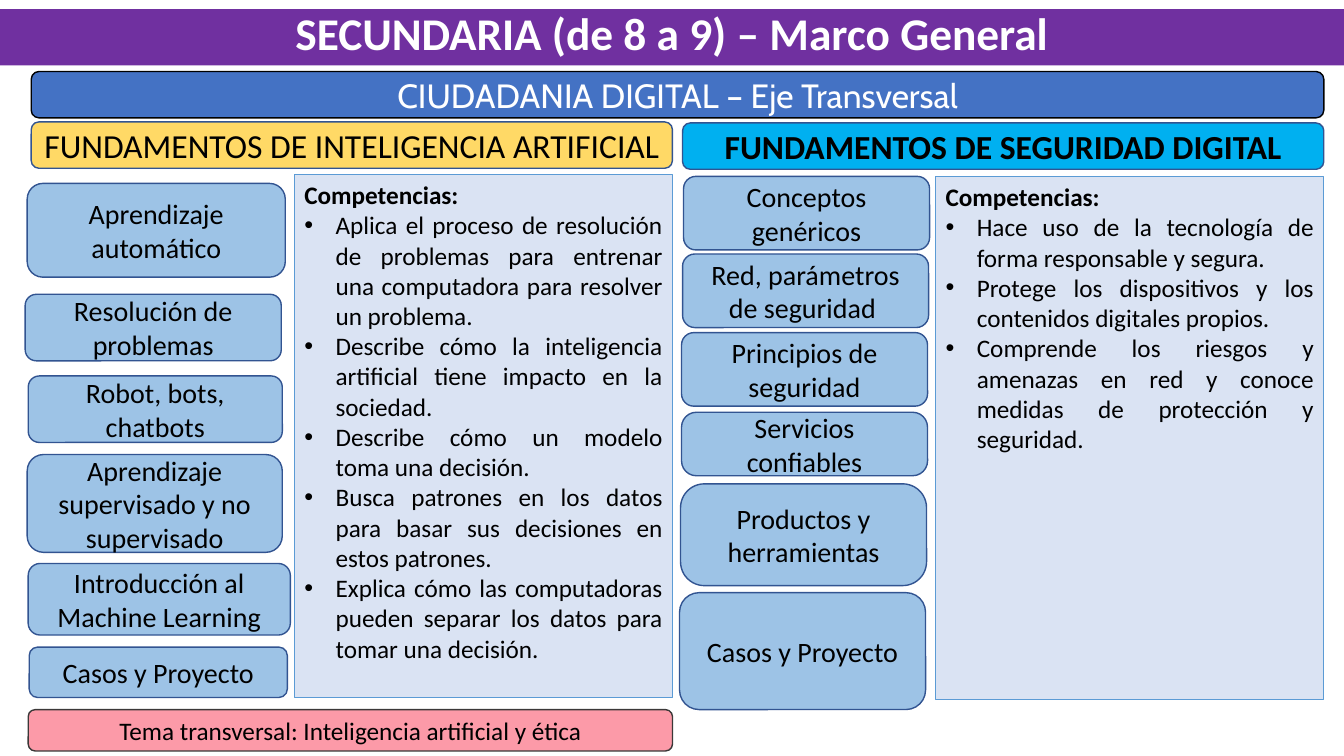
import pptx
import pptx.dml.color
import pptx.enum.shapes
import pptx.enum.text
import pptx.oxml
import pptx.util

PX = 9144
BLACK, WHITE, NAVY, SKY = "000000", "FFFFFF", "325491", "9DC3E6"
SHAPE = pptx.enum.shapes.MSO_SHAPE
ALIGN = pptx.enum.text.PP_ALIGN
ANCHOR = pptx.enum.text.MSO_ANCHOR

AI_TOPICS = [
    ("Aprendizaje automático", (27, 182, 256, 93)),
    ("Resolución de problemas", (25, 292, 254, 66)),
    ("Robot, bots, chatbots", (28, 373, 252, 66)),
    ("Aprendizaje supervisado y no supervisado", (27, 451, 253, 97)),
    ("Introducción al Machine Learning", (28, 559, 260, 71)),
    ("Casos y Proyecto", (29, 642, 256, 50)),
]
SECURITY_TOPICS = [
    ("Conceptos genéricos", (678, 175, 244, 73)),
    ("Red, parámetros de seguridad ", (677, 252, 244, 73)),
    ("Principios de seguridad", (676, 330, 244, 73)),
    ("Servicios confiables", (676, 409, 244, 63), 0.234),
    ("Productos y herramientas", (675, 480, 244, 101), 0.234),
    ("Casos y Proyecto", (674, 588, 244, 116)),
]
AI_SKILLS = [
    "Aplica el proceso de resolución de problemas para entrenar una computadora para resolver un problema.",
    "Describe cómo la inteligencia artificial tiene impacto en la sociedad.",
    "Describe cómo un modelo toma una decisión.",
    "Busca patrones en los datos para basar sus decisiones en estos patrones.",
    "Explica cómo las computadoras pueden separar los datos para tomar una decisión.",
]
SECURITY_SKILLS = [
    "Hace uso de la tecnología de forma responsable y segura.",
    "Protege los dispositivos y los contenidos digitales propios.",
    "Comprende los riesgos y amenazas en red y conoce medidas de protección y seguridad. ",
]


def color(value):
    """Turn a hex string into a colour."""
    return pptx.dml.color.RGBColor.from_string(value)


def add_box(page, place, fill, line=None, kind=SHAPE.ROUNDED_RECTANGLE, corner=None):
    """Draw a filled shape at a (left, top, width, height) place."""
    box = page.shapes.add_shape(kind, *(length * PX for length in place))
    box.shadow.inherit = False
    box.fill.solid()
    box.fill.fore_color.rgb = color(fill)
    if line:
        box.line.color.rgb = color(line)
        box.line.width = pptx.util.Pt(1)
    else:
        box.line.fill.background()
    if corner:
        box.adjustments[0] = corner
    box.text_frame.word_wrap = True
    return box


def write(para, text, size=20, font="Calibri", ink=BLACK, bold=False,
          align=ALIGN.CENTER, spacing=None):
    """Write formatted text into a paragraph."""
    para.alignment = align
    if spacing:
        para.line_spacing = spacing
    span = para.add_run()
    span.text = text
    span.font.name = font
    span.font.size = pptx.util.Pt(size)
    span.font.bold = bold
    span.font.color.rgb = color(ink)


def add_bullet(para, indent=31):
    """Give a paragraph a hanging bullet."""
    properties = para._p.get_or_add_pPr()
    properties.set("marL", str(indent * PX))
    properties.set("indent", str(-indent * PX))
    namespace = pptx.oxml.ns.nsdecls("a")
    for tag in ('buFont {} typeface="Arial"', 'buChar {} char="•"'):
        properties.append(pptx.oxml.parse_xml(f"<a:{tag.format(namespace)}/>"))


def add_label(page, text, place, fill, line=NAVY, kind=SHAPE.ROUNDED_RECTANGLE,
              corner=None, **style):
    """Draw a shape with one centred text."""
    box = add_box(page, place, fill, line, kind, corner)
    box.text_frame.vertical_anchor = ANCHOR.MIDDLE
    write(box.text_frame.paragraphs[0], text, **style)


def add_skills(page, skills, place):
    """Draw a panel with a heading and justified bullets."""
    frame = add_box(page, place, "DAE3F3", "5B9BD5", SHAPE.RECTANGLE).text_frame
    frame.vertical_anchor = ANCHOR.TOP
    write(frame.paragraphs[0], "Competencias:", size=18, bold=True, align=ALIGN.LEFT)
    for skill in skills:
        para = frame.add_paragraph()
        write(para, skill, size=18, align=ALIGN.JUSTIFY)
        add_bullet(para)


def add_topics(page, topics):
    """Draw a column of topic boxes."""
    for text, place, *corner in topics:
        add_label(page, text, place, SKY, corner=corner[0] if corner else None)


def main():
    """Build the slide and save it."""
    deck = pptx.Presentation()
    deck.slide_width, deck.slide_height = 1333 * PX, 750 * PX
    page = deck.slides.add_slide(deck.slide_layouts[6])
    add_label(page, "SECUNDARIA (de 8 a 9) – Marco General", (0, 9, 1333, 56), "7030A0",
              line=None, kind=SHAPE.RECTANGLE, size=32.4, ink=WHITE, bold=True, spacing=0.8)
    add_label(page, "FUNDAMENTOS DE INTELIGENCIA ARTIFICIAL", (31, 121, 636, 46),
              "FFD966", size=24)
    add_label(page, "FUNDAMENTOS DE SEGURIDAD DIGITAL", (677, 122, 636, 46),
              "00B0F0", size=24, bold=True)
    add_label(page, "CIUDADANIA DIGITAL – Eje Transversal", (31, 71, 1282, 46),
              "4472C4", line=BLACK, size=24, font="Cabin", ink=WHITE)
    add_skills(page, AI_SKILLS, (292, 173, 375, 519))
    add_skills(page, SECURITY_SKILLS, (928, 175, 385, 519))
    add_topics(page, AI_TOPICS)
    add_topics(page, SECURITY_TOPICS)
    add_label(page, "Tema transversal: Inteligencia artificial y ética", (28, 704, 639, 41),
              "FC9AA8", line="3B3838", size=18)
    deck.save("out.pptx")


if __name__ == "__main__":
    main()
